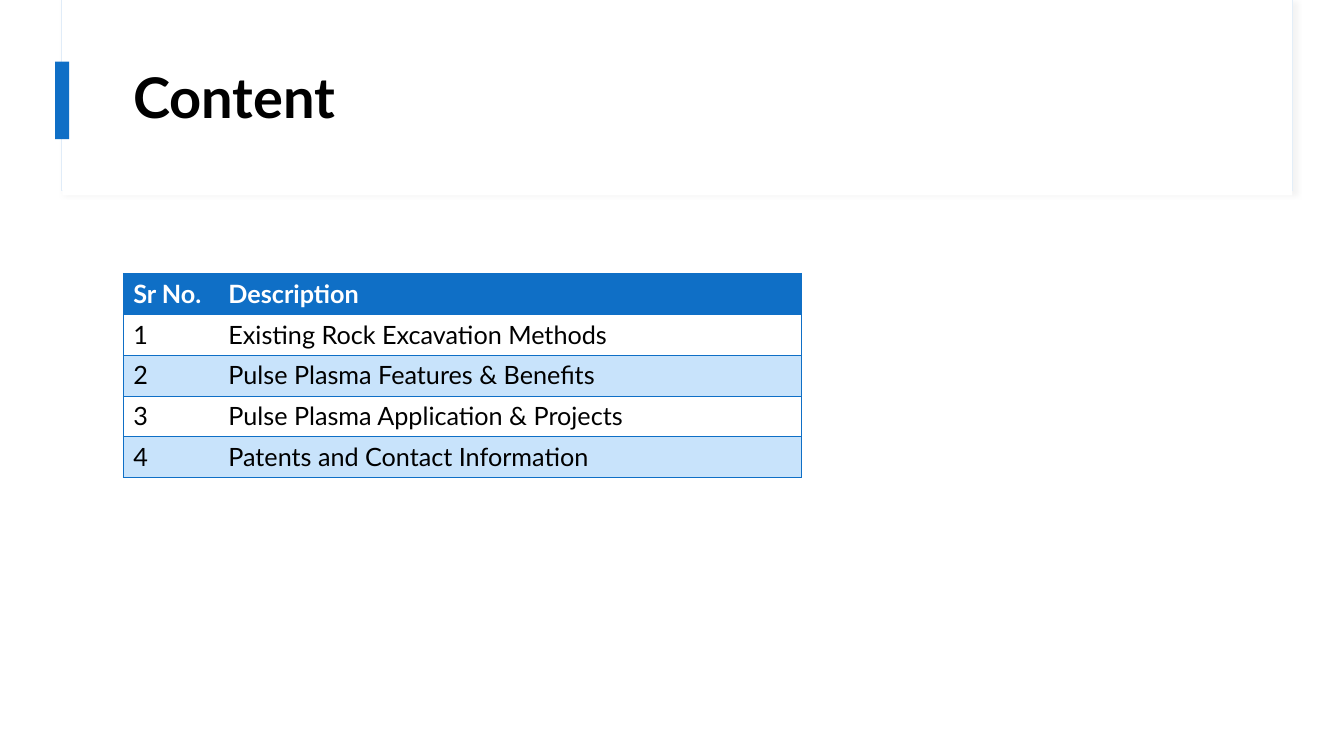
from lxml.etree import SubElement
from pptx import Presentation
from pptx.dml.color import RGBColor
from pptx.enum.shapes import MSO_SHAPE as Shape
from pptx.enum.text import MSO_ANCHOR as Anchor, PP_ALIGN as Align
from pptx.oxml.ns import qn
from pptx.util import Pt

BLUE, PALE_BLUE, WHITE, BLACK = "0F6FC6", "C8E3FB", "FFFFFF", "000000"


def color(value):
    return RGBColor.from_string(value)


def write(frame, text, size=18, fill=BLACK, bold=False, font="Lato", spacing=1.0):
    paragraph = frame.paragraphs[0]
    paragraph.alignment = Align.LEFT
    paragraph.line_spacing = spacing
    run = paragraph.add_run()
    run.text = text
    run.font.name = font
    run.font.size = Pt(size)
    run.font.bold = bold
    run.font.color.rgb = color(fill)


class ContentSlide:
    """Holds the style and the current slide, and draws each kind of element."""

    def __init__(self, presentation):
        self.border_color = BLUE
        self.border_width = 0.5
        self.slide = presentation.slides.add_slide(presentation.slide_layouts[5])

    def box(self, left, top, width, height, fill, line=None):
        shape = self.slide.shapes.add_shape(
            Shape.RECTANGLE, Pt(left), Pt(top), Pt(width), Pt(height))
        shape.shadow.inherit = False
        shape.fill.solid()
        shape.fill.fore_color.rgb = color(fill)
        if line:
            shape.line.color.rgb = color(line)
            shape.line.width = Pt(0.75)
        else:
            shape.line.fill.background()
        return shape

    def shadow(self, shape, fill, opacity, blur, distance, angle):
        effects = shape.element.spPr.find(qn("a:effectLst"))
        outer = SubElement(effects, qn("a:outerShdw"), blurRad=str(Pt(blur)),
                           dist=str(Pt(distance)), dir=str(angle * 60000),
                           algn="tl", rotWithShape="0")
        tint = SubElement(outer, qn("a:srgbClr"), val=fill)
        SubElement(tint, qn("a:alpha"), val=str(opacity * 1000))

    def title(self, text, left, top, width, height):
        title = self.slide.shapes.title
        title.left, title.top = Pt(left), Pt(top)
        title.width, title.height = Pt(width), Pt(height)
        title.text_frame.vertical_anchor = Anchor.MIDDLE
        write(title.text_frame, text, size=40, bold=True, spacing=0.9)
        title.element.getparent().append(title.element)

    def border(self, cell, side, visible):
        properties = cell._tc.get_or_add_tcPr()
        line = SubElement(properties, qn(f"a:ln{side}"), w=str(Pt(self.border_width)))
        if visible:
            fill = SubElement(line, qn("a:solidFill"))
            SubElement(fill, qn("a:srgbClr"), val=self.border_color)
        else:
            SubElement(line, qn("a:noFill"))

    def table(self, rows, left, top, column_widths, row_height):
        table = self.slide.shapes.add_table(
            len(rows), len(column_widths), Pt(left), Pt(top),
            Pt(sum(column_widths)), Pt(row_height * len(rows))).table
        table.horz_banding = False
        for column, width in zip(table.columns, column_widths):
            column.width = Pt(width)
        last = len(column_widths) - 1
        for row_index, texts in enumerate(rows):
            table.rows[row_index].height = Pt(row_height)
            header = row_index == 0
            body_fill = WHITE if row_index % 2 else PALE_BLUE
            for column_index, text in enumerate(texts):
                cell = table.cell(row_index, column_index)
                edges = {"L": column_index == 0, "R": column_index == last,
                         "T": True, "B": True}
                for side, visible in edges.items():
                    self.border(cell, side, visible)
                cell.fill.solid()
                cell.fill.fore_color.rgb = color(BLUE if header else body_fill)
                write(cell.text_frame, text, fill=WHITE if header else BLACK, bold=header)


def main():
    presentation = Presentation()
    presentation.slide_width, presentation.slide_height = Pt(960), Pt(540)
    content = ContentSlide(presentation)
    header_frame = content.box(44, 0, 879, 136, WHITE, line="E0ECF8")
    content.shadow(header_frame, "D9D9D9", opacity=30, blur=4, distance=3, angle=45)
    content.box(44.6, 0, 878.4, 139.7, WHITE)
    content.box(39.4, 44, 10, 55.4, BLUE)
    content.title("Content", 88, 25.2, 800.6, 92.9)
    content.table([
        ("Sr No.", "Description"),
        ("1", "Existing Rock Excavation Methods"),
        ("2", "Pulse Plasma Features & Benefits"),
        ("3", "Pulse Plasma Application & Projects"),
        ("4", "Patents and Contact Information"),
    ], 88, 195.2, (68, 416.6), 29.2)
    presentation.save("out.pptx")


if __name__ == "__main__":
    main()
